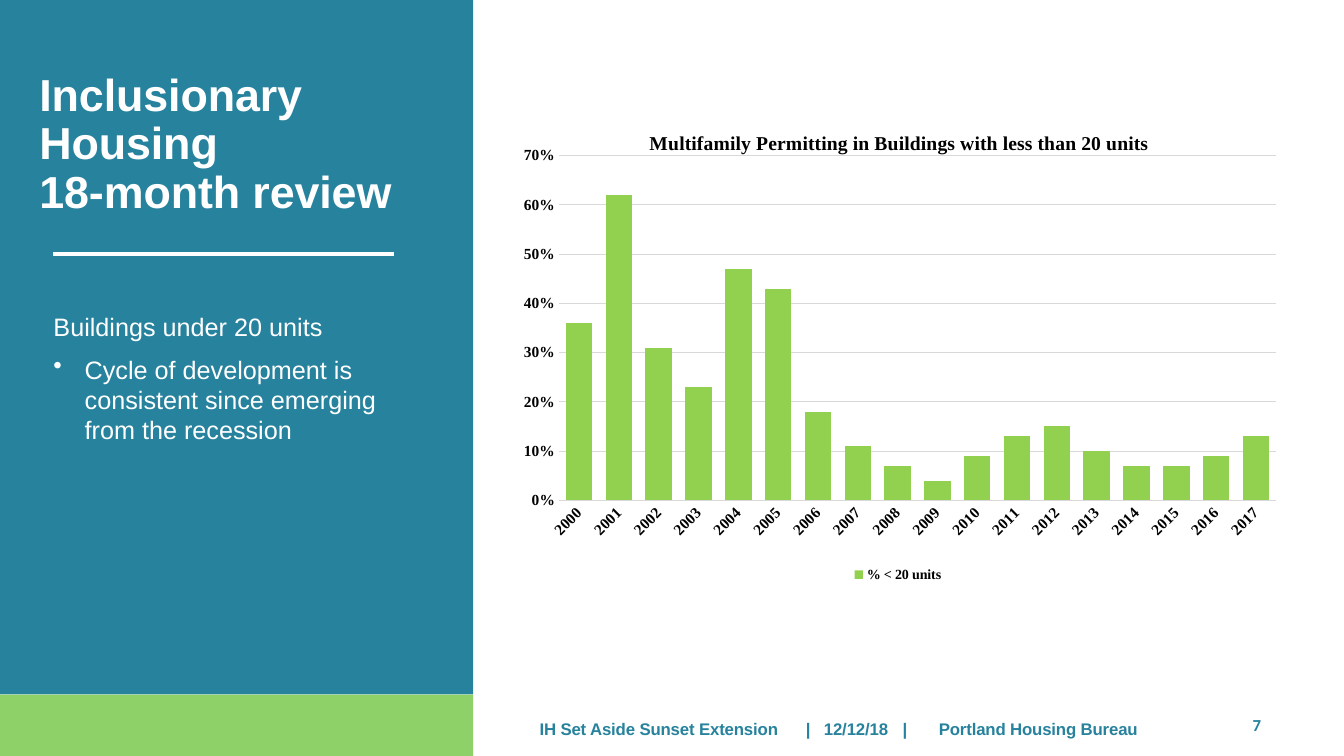
from lxml.etree import SubElement
from pptx import Presentation
from pptx.chart.data import CategoryChartData
from pptx.dml.color import RGBColor
from pptx.enum.chart import XL_CHART_TYPE, XL_LEGEND_POSITION, XL_TICK_MARK
from pptx.enum.shapes import MSO_CONNECTOR, MSO_SHAPE
from pptx.oxml.ns import qn
from pptx.util import Inches, Pt

TEAL = RGBColor(0x27, 0x82, 0x9D)
GREEN = RGBColor(0x8F, 0xD1, 0x69)
LIME = RGBColor(0x92, 0xD0, 0x50)
GREY = RGBColor(0xD9, 0xD9, 0xD9)
WHITE = RGBColor(0xFF, 0xFF, 0xFF)
BLACK = RGBColor(0, 0, 0)

deck = Presentation()
deck.slide_width, deck.slide_height = Inches(13.33), Inches(7.5)
col, row = deck.slide_width / 100, deck.slide_height / 100
slide = deck.slides.add_slide(deck.slide_layouts[6])
shapes = slide.shapes


def box(x, y, w, h):
    return int(x * col), int(y * row), int(w * col), int(h * row)


def write(text, area, size=12, color=WHITE, font="Arial", bold=False, top=0,
          before=0, line=None, pace=0, bullets=(), tabs=()):
    frame = shapes.add_textbox(*box(*area)).text_frame
    frame.word_wrap = True
    frame.margin_left = frame.margin_right = frame.margin_bottom = 0
    frame.margin_top = Inches(top)
    frame.text = text
    for i, para in enumerate(frame.paragraphs):
        para.space_before = Pt(before)
        if line:
            para.line_spacing = Pt(line)
        props = para._p.get_or_add_pPr()
        if i in bullets:
            props.set("marL", str(Inches(0.31)))
            props.set("indent", str(-Inches(0.31)))
            SubElement(props, qn("a:buChar"), char="•")
        if tabs:
            stops = SubElement(props, qn("a:tabLst"))
            for tab in tabs:
                SubElement(stops, qn("a:tab"), pos=str(Inches(tab)), algn="l")
        for run in para.runs:
            run.font.name, run.font.size, run.font.bold = font, Pt(size), bold
            run.font.color.rgb = color
            run.font._element.set("spc", str(pace))


side, split = 35.2, 91.87
for y, h, color in ((0, split, TEAL), (split, 100 - split, GREEN)):
    panel = shapes.add_shape(MSO_SHAPE.RECTANGLE, *box(0, y, side, h))
    panel.shadow.inherit = False
    panel.fill.solid()
    panel.fill.fore_color.rgb = color
    panel.line.fill.background()

left, right, level = int(3.98 * col), int(29.33 * col), int(33.6 * row)
rule = shapes.add_connector(MSO_CONNECTOR.STRAIGHT, left, level, right, level)
rule.line.color.rgb = WHITE
rule.line.width = Pt(2.58)
SubElement(rule._element.spPr, qn("a:effectLst"))

write("Buildings under 20 units\n"
      "Cycle of development is consistent since emerging from the recession",
      (3.98, 39.6, 25.36, 19.5), size=18, top=0.12, before=8.7, bullets=(1,))
write("7", (93.2, 94.4, 1.1, 2.8), color=TEAL, font="Calibri", bold=True,
      top=0.01, before=0.4)
write("Inclusionary Housing\v18-month review", (2.93, 8.53, 27.08, 20.67),
      size=32, bold=True, top=0.07, before=5.2, line=34.7, pace=-10)
write("IH Set Aside Sunset Extension\t|\t12/12/18\t|\tPortland Housing Bureau",
      (40.15, 95.07, 49.5, 2.67), color=TEAL, bold=True, line=14.2, pace=-10,
      tabs=(2.64, 2.82, 3.6, 3.96))

data = CategoryChartData(number_format="0%")
data.categories = [str(year) for year in range(2000, 2018)]
data.add_series("% < 20 units", (
    0.36, 0.62, 0.31, 0.23, 0.47, 0.43, 0.18, 0.11, 0.07,
    0.04, 0.09, 0.13, 0.15, 0.1, 0.07, 0.07, 0.09, 0.13))
chart = shapes.add_chart(XL_CHART_TYPE.COLUMN_STACKED,
                         *box(37.51, 14.27, 58.59, 63.33), data).chart

plot = chart.plots[0]
plot.gap_width, plot.overlap, plot.vary_by_categories = 50, 100, False
bars = plot.series[0].format.fill
bars.solid()
bars.fore_color.rgb = LIME

chart.has_title = True
title = chart.chart_title
title.text_frame.text = "Multifamily Permitting in Buildings with less than 20 units"
chart.has_legend = True
chart.legend.position = XL_LEGEND_POSITION.BOTTOM
chart.legend.include_in_layout = False

years, rates = chart.category_axis, chart.value_axis
for axis in (years, rates):
    axis.major_tick_mark = axis.minor_tick_mark = XL_TICK_MARK.NONE
years.format.line.color.rgb = GREY
years.format.line.width = Pt(0.75)
years.tick_labels.font.size = Pt(11)
years._element.find(qn("c:txPr")).find(qn("a:bodyPr")).set("rot", "-2700000")
rates.format.line.fill.background()
rates.minimum_scale, rates.maximum_scale, rates.major_unit = 0, 0.7, 0.1
rates.tick_labels.number_format = "0%"
rates.tick_labels.number_format_is_linked = False
rates.major_gridlines.format.line.color.rgb = GREY
rates.major_gridlines.format.line.width = Pt(0.75)

fonts = ((title.text_frame.paragraphs[0].runs[0].font, 14),
         (chart.legend.font, 10), (years.tick_labels.font, 11),
         (rates.tick_labels.font, 11), (chart.font, 10))
for font, size in fonts:
    font.name, font.size, font.bold = "Times New Roman", Pt(size), True
    font.color.rgb = BLACK

area = chart._chartSpace.chart.plotArea
spots = ((title._element, 1, {"x": 0.18, "y": 0.04}),
         (area, 0, {"layoutTarget": "inner", "xMode": "edge", "yMode": "edge",
                    "x": 0.07, "y": 0.1, "w": 0.91, "h": 0.72}))
for node, index, values in spots:
    for old in node.findall(qn("c:layout")):
        node.remove(old)
    layout = SubElement(node, qn("c:layout"))
    node.insert(index, layout)
    manual = SubElement(layout, qn("c:manualLayout"))
    if node is not area:
        values = {"xMode": "edge", "yMode": "edge", **values}
    for key, value in values.items():
        SubElement(manual, qn("c:" + key), val=str(value))

deck.save("out.pptx")
